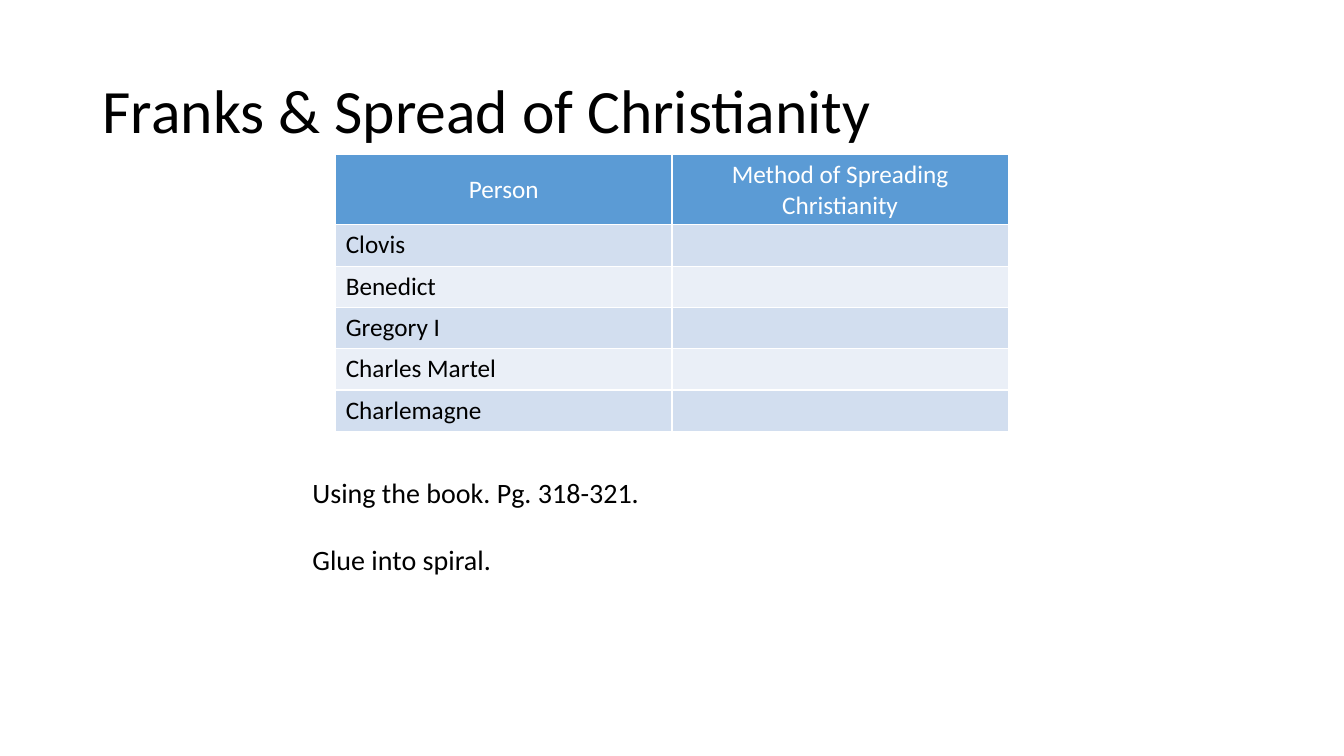
from pptx import Presentation
from pptx.dml.color import RGBColor
from pptx.enum import text
from pptx.util import Inches, Pt

BLACK = RGBColor(0x00, 0x00, 0x00)
WHITE = RGBColor(0xFF, 0xFF, 0xFF)
HEADER_BLUE = RGBColor(0x5B, 0x9B, 0xD5)
BAND_DARK = RGBColor(0xD2, 0xDE, 0xEF)
BAND_LIGHT = RGBColor(0xEA, 0xEF, 0xF7)


def add_run(p, words, size, color):
    r = p.add_run()
    r.text = words
    r.font.name = "Calibri"
    r.font.size = Pt(size)
    r.font.bold = False
    r.font.color.rgb = color


def add_box(left, top, width, height):
    tf = slide.shapes.add_textbox(
        Inches(left), Inches(top), Inches(width), Inches(height)).text_frame
    tf.word_wrap = True
    return tf


prs = Presentation()
prs.slide_width = Inches(13.33)
prs.slide_height = Inches(7.5)
slide = prs.slides.add_slide(prs.slide_layouts[6])

# Title
tf = add_box(0.92, 0.4, 11.5, 1.45)
tf.vertical_anchor = text.MSO_ANCHOR.MIDDLE
tf.paragraphs[0].line_spacing = 0.9
add_run(tf.paragraphs[0], "Franks & Spread of Christianity", 44, BLACK)

# Table of people, with the second column left for answers
headers = ["Person", "Method of Spreading Christianity"]
people = ["Clovis", "Benedict", "Gregory I", "Charles Martel", "Charlemagne"]
rows = [headers] + [[person, ""] for person in people]
table = slide.shapes.add_table(
    len(rows), len(headers),
    Inches(3.33), Inches(1.53), Inches(6.67), Inches(2.75)).table

for i, row in enumerate(rows):
    is_header = i == 0
    table.rows[i].height = Inches(0.7 if is_header else 0.41)
    for j, words in enumerate(row):
        cell = table.cell(i, j)
        cell.fill.solid()
        p = cell.text_frame.paragraphs[0]
        if is_header:
            cell.fill.fore_color.rgb = HEADER_BLUE
            cell.vertical_anchor = text.MSO_ANCHOR.MIDDLE
            p.alignment = text.PP_ALIGN.CENTER
        else:
            cell.fill.fore_color.rgb = BAND_DARK if i % 2 else BAND_LIGHT
        if words:
            add_run(p, words, 18, WHITE if is_header else BLACK)

# Instructions
tf = add_box(3, 4.67, 8, 1.11)
add_run(tf.paragraphs[0], "Using the book. Pg. 318-321.", 20, BLACK)
p = tf.add_paragraph()
p.space_before = Pt(24)
add_run(p, "Glue into spiral.", 20, BLACK)

prs.save("out.pptx")
